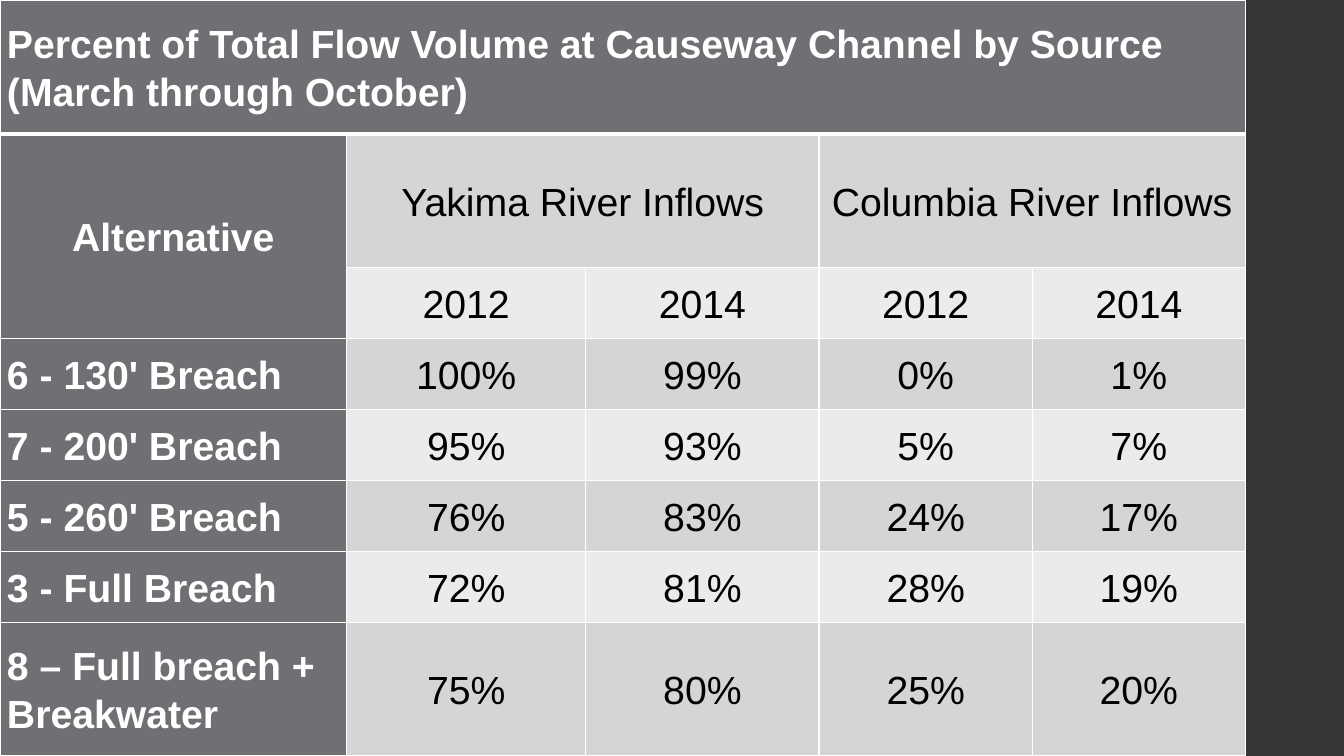
from lxml import etree
from pptx import Presentation
from pptx.dml.color import RGBColor
from pptx.enum.shapes import MSO_SHAPE
from pptx.enum.text import MSO_ANCHOR, PP_ALIGN
from pptx.oxml.ns import qn
from pptx.util import Pt

RECTANGLE = MSO_SHAPE.RECTANGLE
MIDDLE = MSO_ANCHOR.MIDDLE
LEFT, CENTER = PP_ALIGN.LEFT, PP_ALIGN.CENTER

WHITE = RGBColor(0xFF, 0xFF, 0xFF)
BLACK = RGBColor(0x00, 0x00, 0x00)
HEADER_GRAY = RGBColor(0x6F, 0x6F, 0x74)
BAND_DARK = RGBColor(0xD5, 0xD5, 0xD6)
BAND_LIGHT = RGBColor(0xEB, 0xEB, 0xEB)
SIDE_GRAY = RGBColor(0x35, 0x35, 0x37)

SLIDE_WIDTH, SLIDE_HEIGHT = 960, 540
COLUMN_WIDTHS = [247.5, 171, 166.5, 152.5, 152]
ROW_HEIGHTS = [95.5, 95.5, 50.7, 50.7, 50.7, 50.7, 50.7, 95.5]

# None marks a cell covered by a merged neighbour.
FLOW_ROWS = [
    ["Percent of Total Flow Volume at Causeway Channel by Source (March through October)",
     None, None, None, None],
    ["Alternative", "Yakima River Inflows", None, "Columbia River Inflows", None],
    [None, "2012", "2014", "2012", "2014"],
    ["6 - 130' Breach", "100%", "99%", "0%", "1%"],
    ["7 - 200' Breach", "95%", "93%", "5%", "7%"],
    ["5 - 260' Breach", "76%", "83%", "24%", "17%"],
    ["3 - Full Breach", "72%", "81%", "28%", "19%"],
    ["8 – Full breach + Breakwater", "75%", "80%", "25%", "20%"],
]
MERGES = [((0, 0), (0, 4)), ((1, 0), (2, 0)), ((1, 1), (1, 2)), ((1, 3), (1, 4))]


def add_side_band(slide, left, top, width, height):
    band = slide.shapes.add_shape(RECTANGLE, Pt(left), Pt(top), Pt(width), Pt(height))
    band.shadow.inherit = False
    band.fill.solid()
    band.fill.fore_color.rgb = SIDE_GRAY
    band.line.fill.background()


def set_borders(cell, top_width, bottom_width):
    """Draw white borders; call before the fill, which must follow them in the XML."""
    properties = cell._tc.get_or_add_tcPr()
    widths = {"a:lnL": 1, "a:lnR": 1, "a:lnT": top_width, "a:lnB": bottom_width}
    for tag, width in widths.items():
        line = etree.SubElement(properties, qn(tag), w=str(Pt(width)))
        fill = etree.SubElement(line, qn("a:solidFill"))
        etree.SubElement(fill, qn("a:srgbClr"), val=str(WHITE))


def write_cell(cell, text, color, bold, alignment):
    paragraph = cell.text_frame.paragraphs[0]
    paragraph.alignment = alignment
    paragraph.line_spacing = 1.1
    run = paragraph.add_run()
    run.text = text
    run.font.name = "Arial"
    run.font.size = Pt(28)
    run.font.bold = bold
    run.font.color.rgb = color


def format_cell(cell, row, column, text):
    is_header = row == 0 or column == 0
    cell.margin_left = cell.margin_right = Pt(5)
    cell.margin_top = cell.margin_bottom = Pt(0)
    cell.vertical_anchor = MIDDLE
    set_borders(cell, 3 if row == 1 else 1, 3 if row == 0 else 1)
    cell.fill.solid()
    band_color = BAND_DARK if row % 2 else BAND_LIGHT
    cell.fill.fore_color.rgb = HEADER_GRAY if is_header else band_color
    if text is not None:
        centered = column > 0 or row == 1
        write_cell(cell, text, WHITE if is_header else BLACK, is_header,
                   CENTER if centered else LEFT)


def add_flow_table(slide, left, top, width, height):
    frame = slide.shapes.add_table(len(ROW_HEIGHTS), len(COLUMN_WIDTHS),
                                   Pt(left), Pt(top), Pt(width), Pt(height))
    table = frame.table
    for column, column_width in zip(table.columns, COLUMN_WIDTHS):
        column.width = Pt(column_width)
    for row, row_height in zip(table.rows, ROW_HEIGHTS):
        row.height = Pt(row_height)
    for first, last in MERGES:
        table.cell(*first).merge(table.cell(*last))
    for row, texts in enumerate(FLOW_ROWS):
        for column, text in enumerate(texts):
            format_cell(table.cell(row, column), row, column, text)


def main():
    presentation = Presentation()
    presentation.slide_width = Pt(SLIDE_WIDTH)
    presentation.slide_height = Pt(SLIDE_HEIGHT)
    slide = presentation.slides.add_slide(presentation.slide_layouts[6])
    table_width = sum(COLUMN_WIDTHS)
    band_left = table_width - 0.5
    add_side_band(slide, band_left, 0, SLIDE_WIDTH - band_left, SLIDE_HEIGHT)
    add_flow_table(slide, 0, 0, table_width, SLIDE_HEIGHT)
    presentation.save("out.pptx")


if __name__ == "__main__":
    main()
